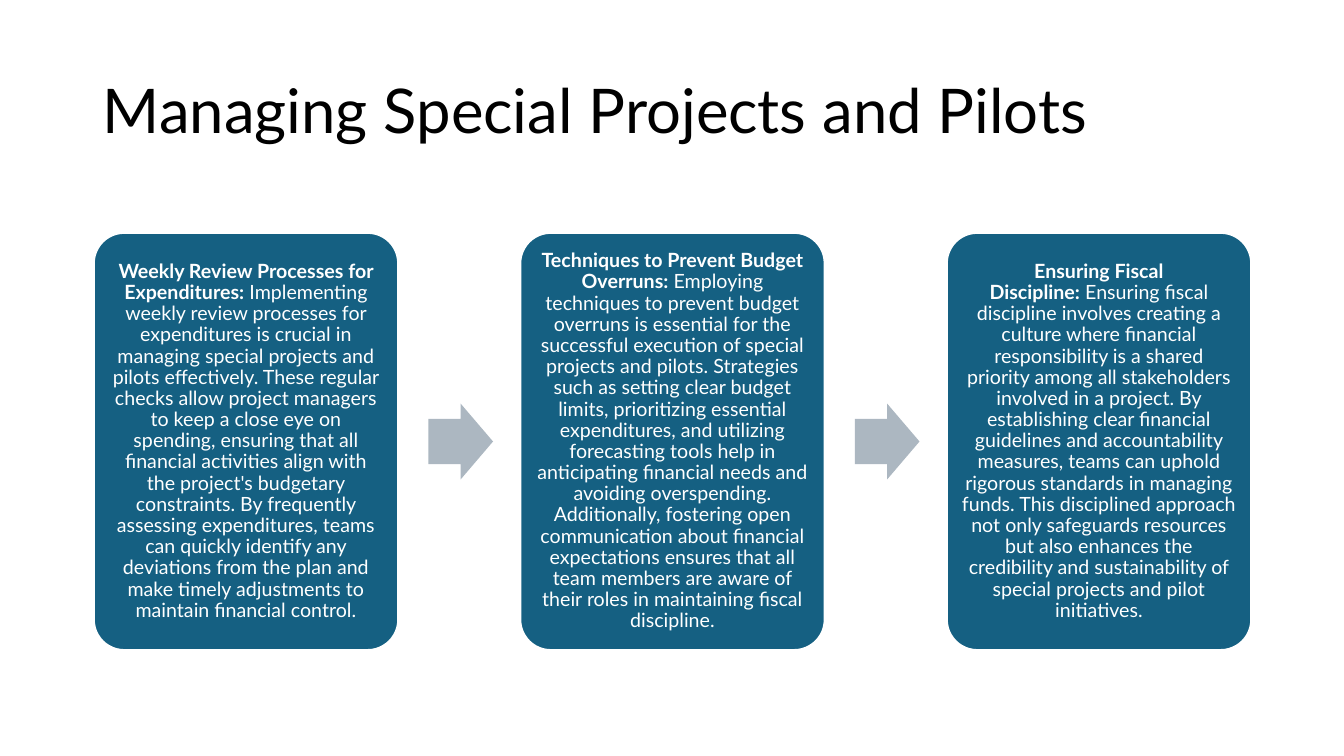
from dataclasses import dataclass

from pptx import Presentation
from pptx.dml.color import RGBColor
from pptx.enum.shapes import MSO_SHAPE
from pptx.enum.text import MSO_ANCHOR, MSO_AUTO_SIZE, PP_ALIGN
from pptx.util import Inches, Pt


@dataclass(frozen=True)
class Theme:
    font: str = "Lato"
    title_size: int = 44
    body_size: int = 14
    line_spacing: float = 0.9
    title_color: RGBColor = RGBColor(0x00, 0x00, 0x00)
    card_color: RGBColor = RGBColor(0x15, 0x60, 0x82)
    arrow_color: RGBColor = RGBColor(0xAC, 0xB7, 0xC1)
    light: RGBColor = RGBColor(0xFF, 0xFF, 0xFF)


THEME = Theme()
NO_BREAK_SPACE = chr(160)

STEPS = [
    (
        "Weekly Review Processes for Expenditures:",
        "Implementing weekly review processes for expenditures is crucial in managing "
        "special projects and pilots effectively. These regular checks allow project "
        "managers to keep a close eye on spending, ensuring that all financial activities "
        "align with the project's budgetary constraints. By frequently assessing "
        "expenditures, teams can quickly identify any deviations from the plan and make "
        "timely adjustments to maintain financial control.",
    ),
    (
        "Techniques to Prevent Budget Overruns:",
        "Employing techniques to prevent budget overruns is essential for the successful "
        "execution of special projects and pilots. Strategies such as setting clear budget "
        "limits, prioritizing essential expenditures, and utilizing forecasting tools help "
        "in anticipating financial needs and avoiding overspending. Additionally, fostering "
        "open communication about financial expectations ensures that all team members are "
        "aware of their roles in maintaining fiscal discipline.",
    ),
    (
        "Ensuring Fiscal Discipline:",
        "Ensuring fiscal discipline involves creating a culture where financial "
        "responsibility is a shared priority among all stakeholders involved in a project. "
        "By establishing clear financial guidelines and accountability measures, teams can "
        "uphold rigorous standards in managing funds. This disciplined approach not only "
        "safeguards resources but also enhances the credibility and sustainability of "
        "special projects and pilot initiatives.",
    ),
]


def format_paragraph(paragraph, size, color, alignment):
    paragraph.alignment = alignment
    paragraph.line_spacing = THEME.line_spacing
    paragraph.font.name = THEME.font
    paragraph.font.size = Pt(size)
    paragraph.font.color.rgb = color


def place_title(slide, text, left, top, width, height):
    title = slide.shapes.title
    title.left, title.top = Inches(left), Inches(top)
    title.width, title.height = Inches(width), Inches(height)
    frame = title.text_frame
    frame.text = text
    frame.word_wrap = True
    frame.auto_size = MSO_AUTO_SIZE.NONE
    frame.vertical_anchor = MSO_ANCHOR.MIDDLE
    format_paragraph(frame.paragraphs[0], THEME.title_size, THEME.title_color, PP_ALIGN.LEFT)


def add_filled_shape(slide, kind, color, left, top, width, height):
    shape = slide.shapes.add_shape(
        kind, Inches(left), Inches(top), Inches(width), Inches(height)
    )
    shape.shadow.inherit = False
    shape.fill.solid()
    shape.fill.fore_color.rgb = color
    shape.line.fill.background()
    return shape


def add_card(slide, heading, body, left, top, width, height):
    card = add_filled_shape(
        slide, MSO_SHAPE.ROUNDED_RECTANGLE, THEME.card_color, left, top, width, height
    )
    card.adjustments[0] = 0.1
    card.line.color.rgb = THEME.light
    card.line.width = Pt(1.5)
    frame = card.text_frame
    frame.word_wrap = True
    frame.vertical_anchor = MSO_ANCHOR.MIDDLE
    frame.margin_left = frame.margin_right = Inches(0.06)
    frame.margin_top = frame.margin_bottom = Inches(0.06)
    paragraph = frame.paragraphs[0]
    format_paragraph(paragraph, THEME.body_size, THEME.light, PP_ALIGN.CENTER)
    heading_run = paragraph.add_run()
    heading_run.text = heading
    heading_run.font.bold = True
    paragraph.add_run().text = NO_BREAK_SPACE + body


def add_arrow(slide, left, top, width, height):
    arrow = add_filled_shape(
        slide, MSO_SHAPE.RIGHT_ARROW, THEME.arrow_color, left, top, width, height
    )
    arrow.adjustments[0] = 0.6
    arrow.adjustments[1] = 0.5


def add_process(slide, steps, left, top, width, height):
    card_width, arrow_width, arrow_height, arrow_gap = 3.02, 0.64, 0.75, 0.3
    pitch = (width - card_width) / (len(steps) - 1)
    arrow_top = top + (height - arrow_height) / 2
    for index, (heading, body) in enumerate(steps):
        card_left = left + index * pitch
        if index:
            arrow_left = card_left - pitch + card_width + arrow_gap
            add_arrow(slide, arrow_left, arrow_top, arrow_width, arrow_height)
        add_card(slide, heading, body, card_left, top, card_width, height)


def main():
    presentation = Presentation()
    presentation.slide_width = Inches(13.33)
    presentation.slide_height = Inches(7.5)
    slide = presentation.slides.add_slide(presentation.slide_layouts.get_by_name("Title Only"))
    place_title(slide, "Managing Special Projects and Pilots", 0.92, 0.4, 11.5, 1.45)
    add_process(slide, STEPS, 0.93, 2.31, 11.48, 4.14)
    presentation.save("out.pptx")


if __name__ == "__main__":
    main()
